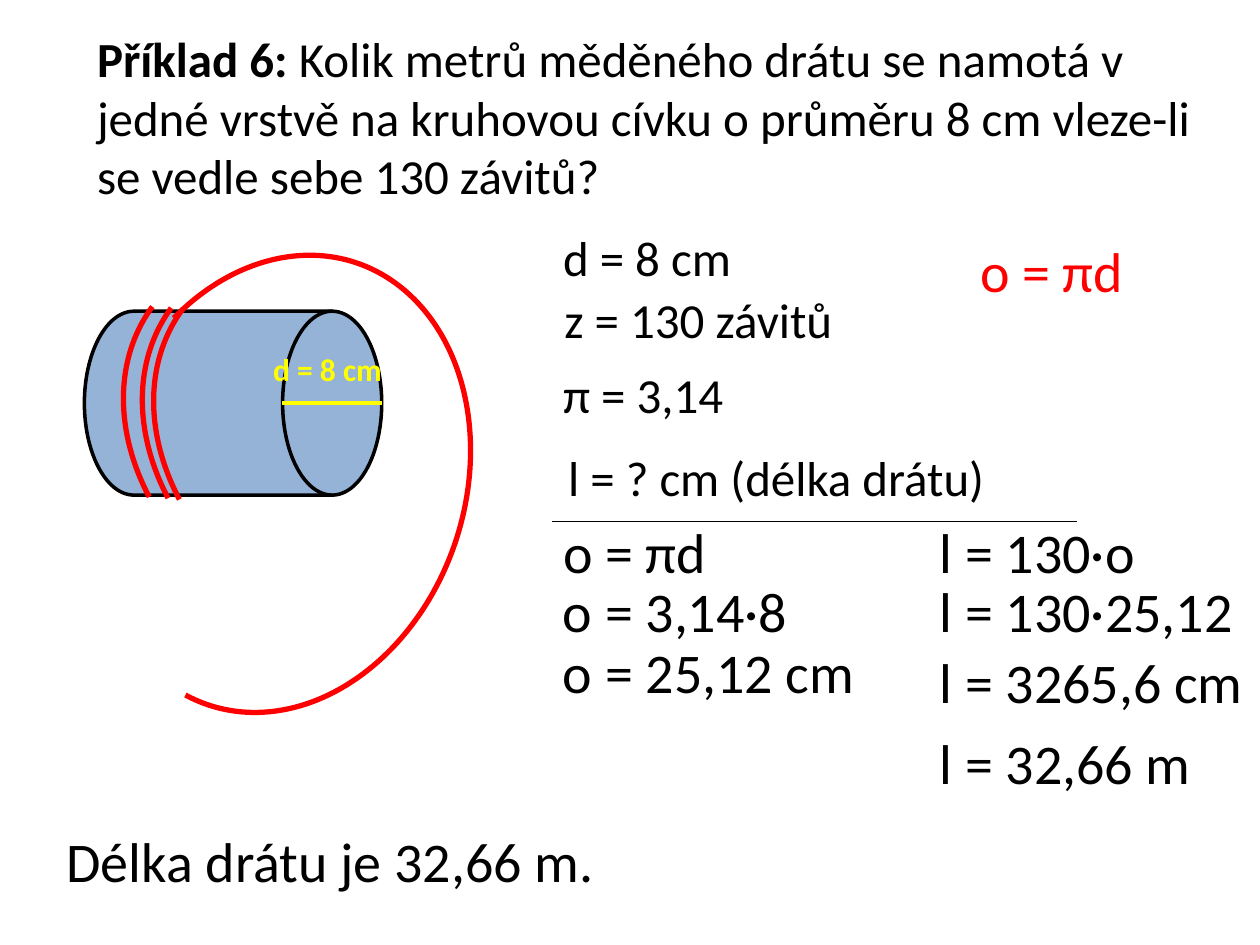
from lxml.etree import SubElement
from pptx import Presentation
from pptx.dml.color import RGBColor
from pptx.enum.shapes import MSO_CONNECTOR, MSO_SHAPE as Preset
from pptx.enum.text import MSO_ANCHOR, MSO_AUTO_SIZE as AutoSize, PP_ALIGN
from pptx.oxml.ns import qn
from pptx.util import Pt

COLORS = {"ink": "000000", "wire": "FF0000", "diameter": "FFFF00", "coil": "95B3D7"}

QUESTION = [
    ("Příklad 6: ", True),
    ("Kolik metrů měděného drátu se namotá v jedné vrstvě na kruhovou cívku "
     "o průměru 8 cm vleze-li se vedle sebe 130 závitů?", False),
]
QUESTION_BOX = (48.24, 21.6, 648, 90)

COIL_BOX = (48.24, 177.84, 169.92, 105.12)
WIRE_SIZE = (208.8, 266.4)
TURN_START, LOOSE_START, WIRE_END = 162, 50.26, 192.95
# left, top, rotation, start of the arc
WIRES = [
    (100.8, 121.68, 306.3, TURN_START),
    (107.28, 122.4, 306.3, TURN_START),
    (56.88, 143.28, 18.4, LOOSE_START),
    (90, 120.96, 306.3, TURN_START),
]

# from, to, colour, width
RULES = [
    ((161.28, 230.4), (218.16, 230.4), "diameter", 2.25),
    ((315.36, 298.08), (615.6, 298.08), "ink", 0.75),
]

GIVEN_X, RESULT_X = 314.64, 529.92
HEIGHTS = {18: 29, 28: 41, 32: 46}
PLAIN = {"size": 28, "bold": False, "color": "ink"}
LARGE = {**PLAIN, "size": 32}
FORMULA = {**LARGE, "color": "wire"}
DIAMETER = {"size": 18, "bold": True, "color": "diameter"}

# text, left, top, width, format
NOTES = [
    ("d = 8 cm", 149.04, 196.56, 81.36, DIAMETER),
    ("d = 8 cm", GIVEN_X, 126.72, 111.6, PLAIN),
    ("z = 130 závitů", 315.36, 162, 169.2, PLAIN),
    ("o = πd", 552.96, 131.76, 97.2, FORMULA),
    ("π = 3,14", GIVEN_X, 204.48, 107.28, PLAIN),
    ("l = ? cm (délka drátu)", 317.52, 252, 258.48, PLAIN),
    ("o = πd", GIVEN_X, 292.32, 97.2, LARGE),
    ("o = 3,14·8", GIVEN_X, 326.16, 144, LARGE),
    ("o = 25,12 cm", GIVEN_X, 360.72, 182.88, LARGE),
    ("l = 130·o", RESULT_X, 292.32, 127.44, LARGE),
    ("l = 130·25,12", RESULT_X, 326.16, 183.6, LARGE),
    ("l = 3265,6 cm", RESULT_X, 366.48, 190.08, LARGE),
    ("l = 32,66 m", RESULT_X, 412.56, 159.84, LARGE),
    ("Délka drátu je 32,66 m.", 30.96, 468.72, 318.96, LARGE),
]


def points(values):
    return [Pt(value) for value in values]


def rgb(color):
    return RGBColor.from_string(COLORS[color])


def write(paragraph, text, size, bold, color):
    run = paragraph.add_run()
    run.text = text
    for name, value in {"name": "Calibri", "size": Pt(size), "bold": bold}.items():
        setattr(run.font, name, value)
    run.font.color.rgb = rgb(color)


def set_line(line, color, width):
    line.color.rgb = rgb(color)
    line.width = Pt(width)


def add_question(slide):
    title = slide.shapes.title
    for name, value in zip(("left", "top", "width", "height"), points(QUESTION_BOX)):
        setattr(title, name, value)
    frame = title.text_frame
    frame.auto_size = AutoSize.NONE
    frame.vertical_anchor = MSO_ANCHOR.MIDDLE
    frame.paragraphs[0].alignment = PP_ALIGN.LEFT
    for text, bold in QUESTION:
        write(frame.paragraphs[0], text, **{**PLAIN, "bold": bold})


def add_coil(shapes):
    coil = shapes.add_shape(Preset.FLOWCHART_DIRECT_ACCESS_STORAGE, *points(COIL_BOX))
    coil.shadow.inherit = False
    coil.fill.solid()
    coil.fill.fore_color.rgb = rgb("coil")
    set_line(coil.line, "ink", 2)


def add_wire(shapes, left, top, rotation, start):
    """Draw one mirrored arc of the wire."""
    wire = shapes.add_shape(Preset.ARC, *points((left, top, *WIRE_SIZE)))
    wire.shadow.inherit = False
    wire.fill.background()
    set_line(wire.line, "wire", 3)
    wire.adjustments[0], wire.adjustments[1] = start, WIRE_END
    wire.rotation = rotation
    wire.element.spPr.find(qn("a:xfrm")).set("flipH", "1")


def add_rule(shapes, start, end, color, width):
    rule = shapes.add_connector(MSO_CONNECTOR.STRAIGHT, *points(start + end))
    set_line(rule.line, color, width)
    SubElement(rule.element.spPr, qn("a:effectLst"))


def add_note(shapes, text, left, top, width, style):
    box = points((left, top, width, HEIGHTS[style["size"]]))
    frame = shapes.add_textbox(*box).text_frame
    frame.word_wrap = False
    frame.auto_size = AutoSize.SHAPE_TO_FIT_TEXT
    write(frame.paragraphs[0], text, **style)


def main():
    deck = Presentation()
    deck.slide_width, deck.slide_height = Pt(720), Pt(540)
    slide = deck.slides.add_slide(deck.slide_layouts[5])
    add_question(slide)
    add_coil(slide.shapes)
    for add, rows in ((add_wire, WIRES), (add_rule, RULES), (add_note, NOTES)):
        for row in rows:
            add(slide.shapes, *row)
    deck.save("out.pptx")


if __name__ == "__main__":
    main()
